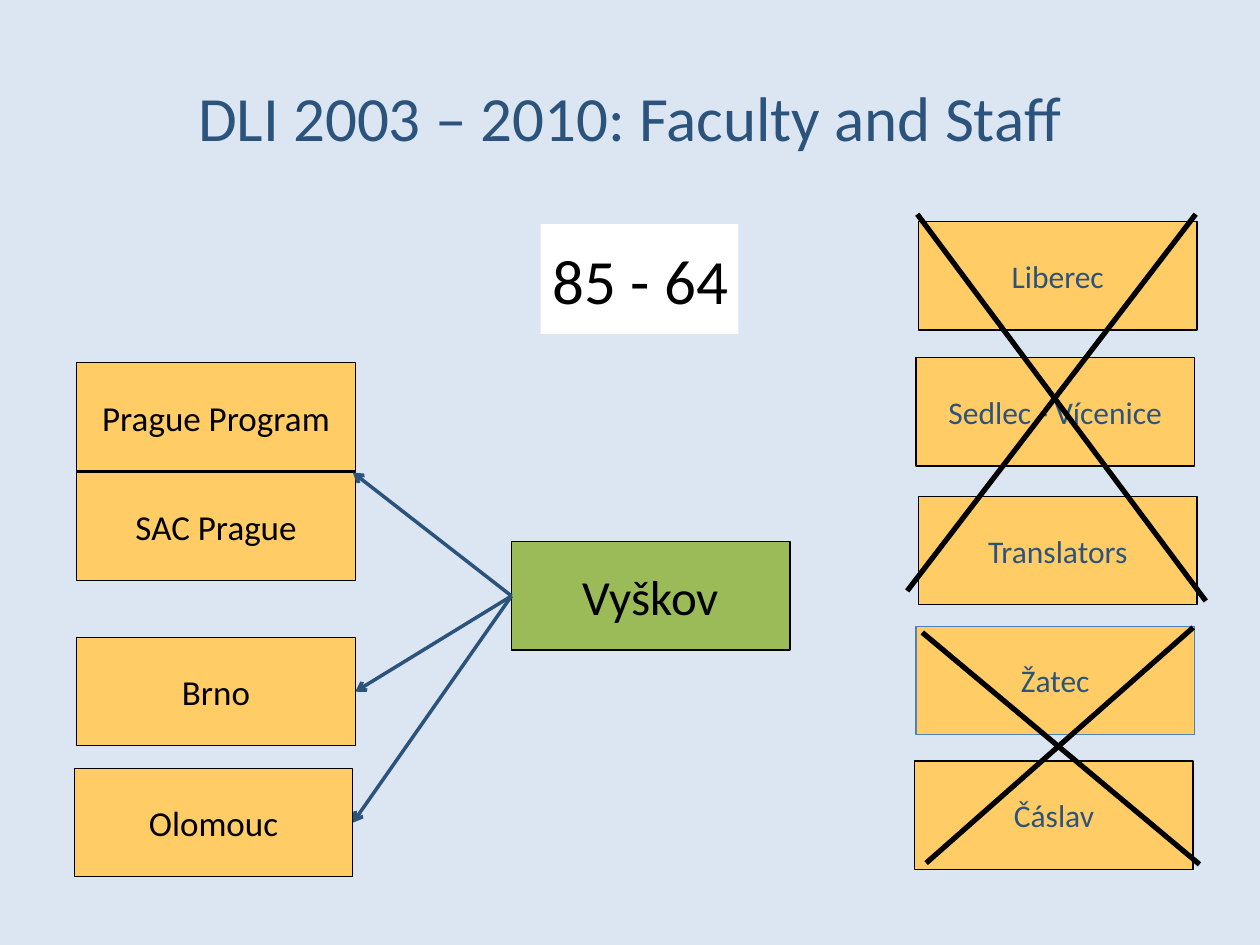
from dataclasses import dataclass

from lxml import etree
from pptx import Presentation
from pptx import util as u
from pptx.dml import color
from pptx.enum import shapes, text
from pptx.oxml import ns

FONT = "Calibri"
NAVY, BLACK, WHITE = "2C537C", "000000", "FFFFFF"
AMBER, GREEN, BLUE, PALE = "FFCC66", "9BBB59", "4F81BD", "DCE6F2"
BOX_W, BOX_H = 2.21, 0.86


@dataclass
class Box:
    label: str
    x: float
    y: float
    size: int = 20
    ink: str = BLACK
    fill: str = AMBER
    border: str | None = BLACK
    w: float = BOX_W
    h: float = BOX_H
    align: text.PP_ALIGN = text.PP_ALIGN.CENTER


@dataclass
class Line:
    start: tuple[float, float]
    end: tuple[float, float]
    ink: str = BLACK
    width: float = 3
    arrow: bool = False


def rgb(value: str) -> color.RGBColor:
    return color.RGBColor.from_string(value)


def write(sp, label: str, size: int, ink: str, align, wrap: bool = False) -> None:
    tf = sp.text_frame
    tf.word_wrap = wrap
    tf.vertical_anchor = text.MSO_ANCHOR.MIDDLE
    p = tf.paragraphs[0]
    p.alignment = align
    r = p.add_run()
    r.text = label
    r.font.name = FONT
    r.font.size = u.Pt(size)
    r.font.color.rgb = rgb(ink)


def draw_box(s, box: Box) -> None:
    sp = s.shapes.add_shape(
        shapes.MSO_SHAPE.RECTANGLE,
        u.Inches(box.x), u.Inches(box.y), u.Inches(box.w), u.Inches(box.h))
    sp.shadow.inherit = False
    sp.fill.solid()
    sp.fill.fore_color.rgb = rgb(box.fill)
    if box.border:
        sp.line.color.rgb = rgb(box.border)
        sp.line.width = u.Pt(0.75)
    else:
        sp.line.fill.background()
    write(sp, box.label, box.size, box.ink, box.align)


def draw_line(s, line: Line) -> None:
    points = [u.Inches(v) for v in (*line.start, *line.end)]
    sp = s.shapes.add_connector(shapes.MSO_CONNECTOR.STRAIGHT, *points)
    sp.line.color.rgb = rgb(line.ink)
    sp.line.width = u.Pt(line.width)
    if line.arrow:
        etree.SubElement(sp.line._get_or_add_ln(), ns.qn("a:tailEnd"), type="arrow")
    etree.SubElement(sp._element.spPr, ns.qn("a:effectLst"))


# Closed sites on the right, and the strokes that cross them out
CLOSED = [
    Box("Sedlec - Vícenice", 7.27, 2.84, 18, NAVY),
    Box("Liberec", 7.29, 1.76, 18, NAVY),
    Box("Translators", 7.29, 3.94, 18, NAVY),
    Box("Čáslav", 7.26, 6.04, 18, NAVY),
    Box("Žatec", 7.27, 4.97, 18, NAVY, border=BLUE),
]
STROKES = [
    Line((9.47, 4.98), (7.35, 6.85)),
    Line((7.32, 5.02), (9.52, 6.86)),
    Line((7.28, 1.7), (9.57, 4.77)),
    Line((9.49, 1.7), (7.2, 4.69)),
]

# Main site, its branches and the head count
ACTIVE = [
    Box("Vyškov", 4.06, 4.3, 28, fill=GREEN),
    Box("SAC Prague", 0.61, 3.75),
    Box("Prague Program", 0.61, 2.88),
    Box("Brno", 0.61, 5.06),
    Box("Olomouc", 0.59, 6.1),
    Box("85 - 64", 4.29, 1.78, 36, fill=WHITE, border=None, w=1.57, h=0.87,
        align=text.PP_ALIGN.LEFT),
]
HUB = (4.06, 4.73)
BRANCH_ENDS = [(2.8, 3.75), (2.82, 5.49), (2.8, 6.53)]


def main() -> None:
    prs = Presentation()
    prs.slide_width, prs.slide_height = u.Inches(10), u.Inches(7.5)
    s = prs.slides.add_slide(prs.slide_layouts[6])
    s.background.fill.solid()
    s.background.fill.fore_color.rgb = rgb(PALE)

    # Title
    title = s.shapes.add_textbox(
        u.Inches(0.5), u.Inches(0.3), u.Inches(9), u.Inches(1.25))
    write(title, "DLI 2003 – 2010: Faculty and Staff", 36, NAVY,
          text.PP_ALIGN.CENTER, wrap=True)

    # Diagram, from back to front
    for box in CLOSED:
        draw_box(s, box)
    for stroke in STROKES:
        draw_line(s, stroke)
    for box in ACTIVE:
        draw_box(s, box)
    for end in BRANCH_ENDS:
        draw_line(s, Line(HUB, end, NAVY, 2, arrow=True))

    prs.save("out.pptx")


if __name__ == "__main__":
    main()
